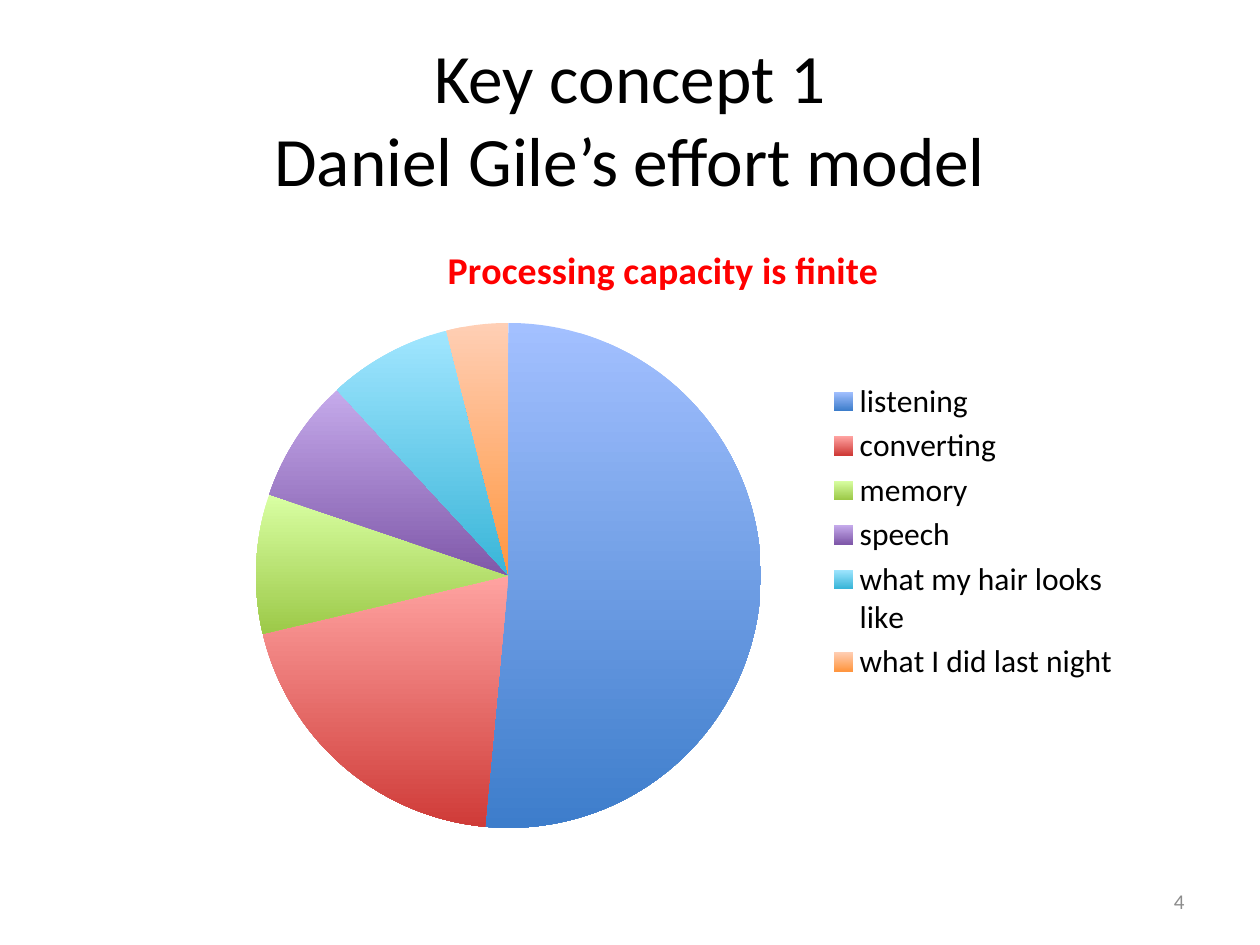
from dataclasses import dataclass
from typing import Any

from lxml import etree
from pptx import Presentation
from pptx.chart.data import CategoryChartData
from pptx.dml.color import RGBColor
from pptx.enum import chart as charts, text
from pptx.oxml import ns
from pptx.util import Emu, Pt

PX = 914400 / 126


def px(length):
    return Emu(round(length * PX))


def color(hex_code):
    return RGBColor.from_string(hex_code)


@dataclass
class Painter:
    slide: Any
    font: str = "Calibri"
    ink: str = "000000"

    def style(self, font, size, hex_code):
        font.name, font.size = self.font, Pt(size)
        font.color.rgb = color(hex_code)

    def label(self, box, words, size, align, hex_code):
        frame = self.slide.shapes.add_textbox(*map(px, box)).text_frame
        frame.word_wrap = True
        frame.vertical_anchor = text.MSO_ANCHOR.MIDDLE
        frame.text = words
        paragraph = frame.paragraphs[0]
        paragraph.alignment = align
        self.style(paragraph.font, size, hex_code)

    def pie(self, box, heading, slices, plot_area):
        data = CategoryChartData()
        data.categories = [name for name, *_ in slices]
        data.add_series(heading, [value for _, value, *_ in slices])
        pie = self.slide.shapes.add_chart(
            charts.XL_CHART_TYPE.PIE, *map(px, box), data).chart
        self.style(pie.font, 18, self.ink)

        # Heading
        pie.has_title = True
        pie.chart_title.include_in_layout = False
        title = pie.chart_title.text_frame
        title.text = heading
        self.style(title.paragraphs[0].font, 21.6, "FF0000")
        title.paragraphs[0].font.bold = True

        # Legend
        pie.has_legend = True
        pie.legend.position = charts.XL_LEGEND_POSITION.RIGHT
        pie.legend.include_in_layout = False
        self.style(pie.legend.font, 18, self.ink)

        # Slices, each shaded from top to bottom
        plot = pie.plots[0]
        plot.vary_by_categories = True
        for index, (_, _, *shades) in enumerate(slices):
            fill = plot.series[0].points[index].format.fill
            fill.gradient()
            fill.gradient_angle = 270
            for stop, position, shade in zip(fill.gradient_stops, (0, 1), shades):
                stop.position = position
                stop.color.rgb = color(shade)
        self.place_plot(pie, box, plot_area)

    def place_plot(self, pie, box, area):
        left, top, width, height = box
        x, y, w, h = area
        plot = pie._chartSpace.chart.plotArea
        for old in plot.findall(ns.qn("c:layout")):
            plot.remove(old)
        layout = etree.Element(ns.qn("c:layout"))
        manual = etree.SubElement(layout, ns.qn("c:manualLayout"))
        settings = {
            "layoutTarget": "inner", "xMode": "edge", "yMode": "edge",
            "x": (x - left) / width, "y": (y - top) / height,
            "w": w / width, "h": h / height,
        }
        for name, value in settings.items():
            etree.SubElement(manual, ns.qn(f"c:{name}")).set("val", str(value))
        plot.insert(0, layout)


def main():
    deck = Presentation()
    deck.slide_width, deck.slide_height = px(1260), px(945)
    painter = Painter(deck.slides.add_slide(deck.slide_layouts[6]))

    # Title
    painter.label((63, 38, 1134, 158), "Key concept 1\vDaniel Gile’s effort model",
                  39.6, text.PP_ALIGN.CENTER, painter.ink)

    # Effort shares: name, value, top shade, bottom shade
    efforts = [
        ("listening", 52, "A3C0FF", "3D7DCB"),
        ("converting", 20, "FFA3A1", "CF3B38"),
        ("memory", 9, "D9FFA3", "9CC948"),
        ("speech", 8, "C5AAEB", "7F58A9"),
        ("what my hair looks like", 8, "A1E6FF", "39B5D8"),
        ("what I did last night", 4, "FFCFB5", "FF9640"),
    ]
    painter.pie((194, 217, 939, 629), "Processing capacity is finite",
                efforts, (256, 323, 505, 505))

    # Slide number
    painter.label((903, 876, 294, 50), "4", 12, text.PP_ALIGN.RIGHT, "8C8C8C")

    deck.save("out.pptx")


if __name__ == "__main__":
    main()
